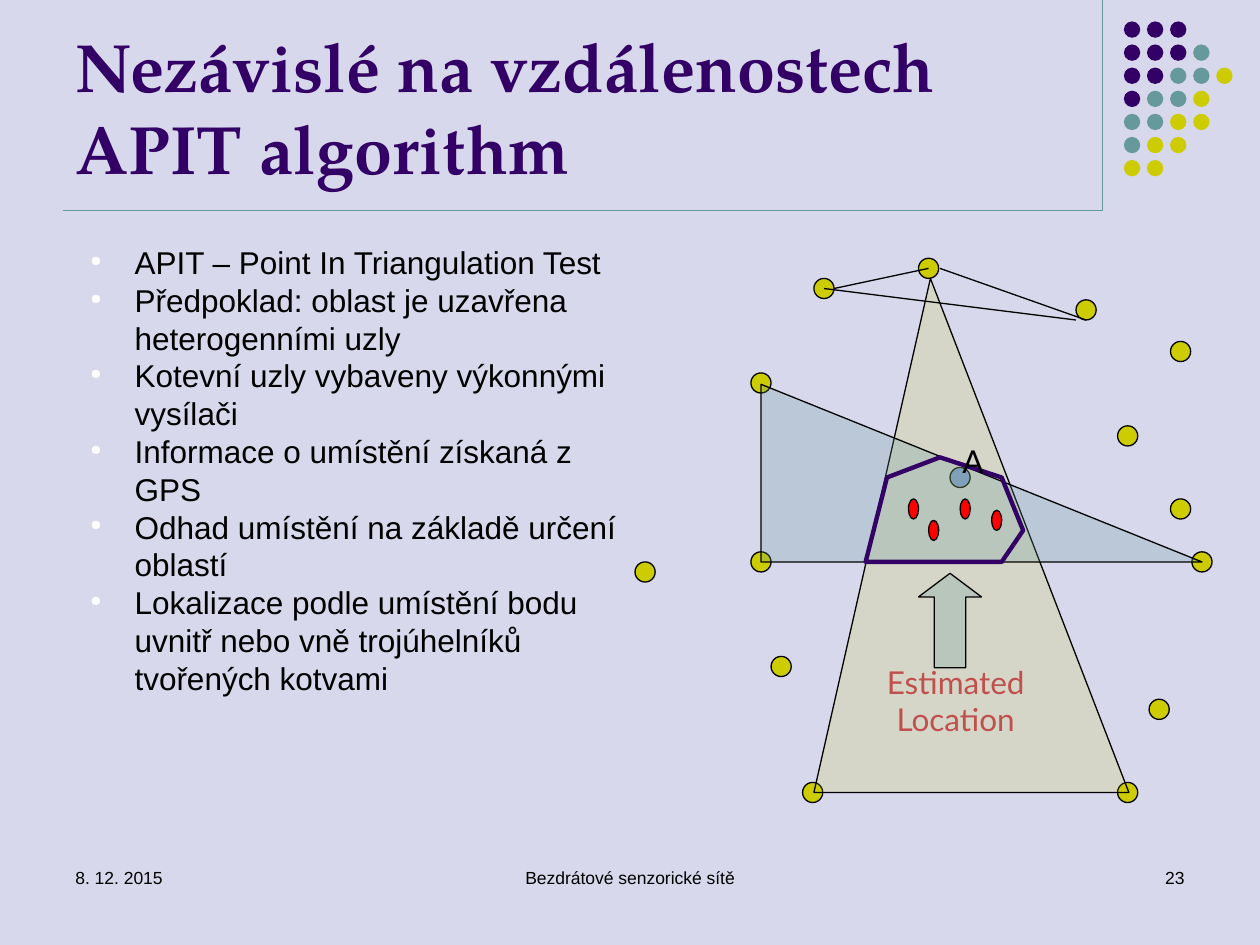
"""Build the APIT localisation slide."""
from lxml.etree import SubElement
from pptx import Presentation
from pptx.dml.color import RGBColor
from pptx.enum.shapes import MSO_CONNECTOR, MSO_SHAPE
from pptx.enum.text import MSO_ANCHOR, PP_ALIGN
from pptx.oxml.ns import qn
from pptx.util import Inches, Pt

THEME = {
    "back": "D8D8EC", "deep": "330066", "teal": "669999", "lime": "CCCC00",
    "blue": "7E9CE8", "red": "FF0000", "black": "000000", "white": "FFFFFF",
    "title": ("deep", {"name": "TeX Gyre Pagella", "size": Pt(39), "bold": True}),
    "body": ("black", {"name": "Arial", "size": Pt(18)}),
    "foot": ("black", {"name": "Arial", "size": Pt(10)}),
    "label": ("black", {"name": "Lato", "size": Pt(18)}),
    "note": ("coral", {"name": "Lato", "size": Pt(18)}),
    "coral": "C0504D",
}


def tint(name):
    """Return a theme colour."""
    return RGBColor.from_string(THEME[name])


def draw(kind, box, fill, edge="black", alpha=None, adjust=()):
    """Add a filled preset shape."""
    shape = shapes.add_shape(kind, *map(Inches, box))
    shape.shadow.inherit = False
    shape.fill.solid()
    shape.fill.fore_color.rgb = tint(fill)
    if alpha:
        color = shape._element.spPr.find(qn("a:solidFill"))[0]
        SubElement(color, qn("a:alpha"), val=str(alpha * 1000))
    if edge:
        shape.line.color.rgb = tint(edge)
        shape.line.width = Pt(0.75)
    else:
        shape.line.fill.background()
    for index, value in enumerate(adjust):
        shape.adjustments[index] = value


deck = Presentation()
deck.slide_width, deck.slide_height = Inches(10), Inches(7.5)
slide = deck.slides.add_slide(deck.slide_layouts[6])
slide.background.fill.solid()
slide.background.fill.fore_color.rgb = tint("back")
shapes = slide.shapes

names = {"D": "deep", "T": "teal", "L": "lime"}
for row, marks in enumerate(["DDD", "DDDT", "DDTTL", "DTTL", "TTLL", "TLL", "LL"]):
    for col, mark in enumerate(marks):
        spot = (8.92 + col * 0.55 / 3, 0.17 + row * 0.55 / 3, 0.13, 0.13)
        draw(MSO_SHAPE.OVAL, spot, names[mark], None)

nodes = [
    (7.29, 2.05), (5.96, 2.96), (5.96, 4.38), (6.37, 6.21), (8.87, 6.21),
    (9.46, 4.38), (8.54, 2.38), (6.12, 5.21), (6.46, 2.21), (8.87, 3.38),
    (9.29, 2.71), (9.29, 3.96), (5.04, 4.46), (9.12, 5.55),
]
for left, top in nodes:
    draw(MSO_SHAPE.OVAL, (left, top, 0.16, 0.16), "lime")
draw(MSO_SHAPE.OVAL, (7.54, 3.71, 0.16, 0.16), "blue")

draw(MSO_SHAPE.ISOSCELES_TRIANGLE, (6.46, 2.21, 2.5, 4.08), "lime", alpha=15, adjust=[0.37])
draw(MSO_SHAPE.RIGHT_TRIANGLE, (6.04, 3.05, 3.5, 1.41), "teal", alpha=25)

edges = [(7.46, 3.63), (7.95, 3.79), (8.12, 4.21), (7.95, 4.46), (6.87, 4.46), (7.04, 3.79)]
points = [(Inches(x), Inches(y)) for x, y in edges]
path = shapes.build_freeform(*points[0])
path.add_line_segments(points[1:], close=True)
zone = path.convert_to_shape()
zone.shadow.inherit = False
zone.fill.background()
zone.line.color.rgb = tint("deep")
zone.line.width = Pt(2.5)

draw(MSO_SHAPE.UP_ARROW, (7.29, 4.55, 0.5, 0.75), "teal", alpha=25, adjust=[0.5, 0.375])
for left, top in [(7.21, 3.96), (7.37, 4.13), (7.62, 3.96), (7.87, 4.05)]:
    draw(MSO_SHAPE.OVAL, (left, top, 0.08, 0.16), "red")

lines = [
    (8.75, 0, 8.75, 1.67, "teal"),
    (0.5, 1.67, 8.75, 1.67, "teal"),
    (6.54, 2.29, 8.54, 2.54, "black"),
    (6.62, 2.29, 7.37, 2.13, "black"),
    (7.46, 2.13, 8.62, 2.54, "black"),
]
for *ends, color in lines:
    line = shapes.add_connector(MSO_CONNECTOR.STRAIGHT, *map(Inches, ends))
    line.line.color.rgb = tint(color)
    line.line.width = Pt(0.75)
    SubElement(line._element.spPr, qn("a:effectLst"))

facts = [
    "APIT – Point In Triangulation Test",
    "Předpoklad: oblast je uzavřena heterogenními uzly",
    "Kotevní uzly vybaveny výkonnými vysílači",
    "Informace o umístění získaná z GPS",
    "Odhad umístění na základě určení oblastí",
    "Lokalizace podle umístění bodu uvnitř nebo vně trojúhelníků tvořených kotvami",
]
texts = [
    ((0.5, 0.13, 8.25, 1.41), "title", PP_ALIGN.LEFT,
     ["Nezávislé na vzdálenostech", "APIT algorithm"]),
    ((0.5, 1.88, 4.54, 4.82), "body", PP_ALIGN.LEFT, facts),
    ((0.5, 6.83, 2.33, 0.5), "foot", PP_ALIGN.LEFT, ["8. 12. 2015"]),
    ((3.42, 6.83, 3.16, 0.5), "foot", PP_ALIGN.CENTER, ["Bezdrátové senzorické sítě"]),
    ((7.17, 6.83, 2.33, 0.5), "foot", PP_ALIGN.RIGHT, ["23"]),
    ((6.71, 5.21, 1.75, 0.7), "note", PP_ALIGN.CENTER, ["Estimated Location"]),
    ((7.54, 3.46, 0.33, 0.4), "label", PP_ALIGN.CENTER, ["A"]),
]
for box, style, align, words in texts:
    frame = shapes.add_textbox(*map(Inches, box)).text_frame
    frame.word_wrap = True
    frame.vertical_anchor = MSO_ANCHOR.BOTTOM if style == "title" else MSO_ANCHOR.TOP
    frame.text = "\n".join(words)
    color, form = THEME[style]
    for para in frame.paragraphs:
        para.alignment = align
        font = para.runs[0].font
        font.color.rgb = tint(color)
        for key, value in form.items():
            setattr(font, key, value)
        if style == "body":
            props = para._p.get_or_add_pPr()
            props.set("marL", str(Inches(0.47)))
            props.set("indent", str(Inches(-0.35)))
            shade = SubElement(props, qn("a:buClr"))
            SubElement(shade, qn("a:srgbClr"), val=THEME["white"])
            SubElement(props, qn("a:buSzPct"), val="45000")
            SubElement(props, qn("a:buChar"), char="●")

deck.save("out.pptx")
